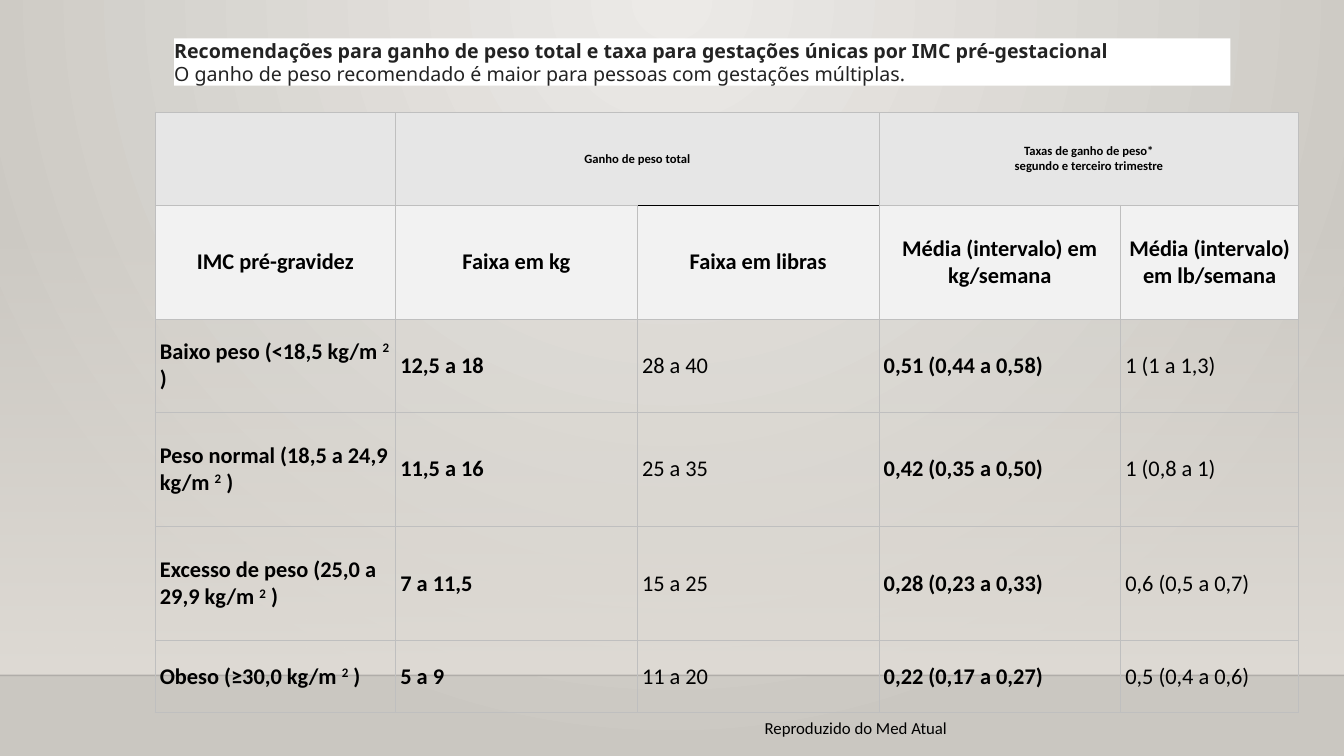
from lxml import etree
from pptx import Presentation
from pptx.dml.color import RGBColor
from pptx.enum.shapes import MSO_CONNECTOR, MSO_SHAPE
from pptx.enum.text import MSO_ANCHOR, PP_ALIGN
from pptx.oxml import parse_xml
from pptx.oxml.ns import qn
from pptx.util import Cm, Pt

RECT = MSO_SHAPE.RECTANGLE
STRAIGHT = MSO_CONNECTOR.STRAIGHT
MIDDLE = MSO_ANCHOR.MIDDLE
LEFT, CENTER = PP_ALIGN.LEFT, PP_ALIGN.CENTER
NS = 'xmlns:a="http://schemas.openxmlformats.org/drawingml/2006/main"'
PLAIN = "{2D5ABB26-0587-4C30-8999-92F81FD0307C}"  # table style without grid
GREY, BLACK = "BFBFBF", "000000"


def rgb(code):
    return RGBColor.from_string(code)


def write(par, text, size, bold=False, font="Calibri", color=BLACK):
    run = par.add_run()
    run.text = text
    run.font.size, run.font.bold, run.font.name = Pt(size), bold, font
    run.font.color.rgb = rgb(color)
    return run


prs = Presentation()
prs.slide_width, prs.slide_height = Cm(33.87), Cm(19.05)
slide = prs.slides.add_slide(prs.slide_layouts[6])
shapes = slide.shapes

# Backdrop: round glow, fading wall and floor line
wall = shapes.add_shape(RECT, 0, Cm(5.61), prs.slide_width, Cm(11.41))
wall.shadow.inherit = False
wall.line.fill.background()
glow = ('<a:path path="circle"><a:fillToRect l="43000" r="43000" b="100000"/>'
        '</a:path>')
fade = '<a:lin ang="5400000" scaled="0"/>'
for fill, first, alpha, last, shade in (
        (slide.background.fill, "ECEAE7", 100000, "CAC7C1", glow),
        (wall.fill, "DFDBD5", 0, "DFDBD5", fade)):
    fill.gradient()
    owner = fill._xPr
    old = owner.find(qn("a:gradFill"))
    owner.replace(old, parse_xml(
        f'<a:gradFill {NS} rotWithShape="1"><a:gsLst>'
        f'<a:gs pos="0"><a:srgbClr val="{first}"><a:alpha val="{alpha}"/>'
        f'</a:srgbClr></a:gs><a:gs pos="100000"><a:srgbClr val="{last}"/>'
        f'</a:gs></a:gsLst>{shade}</a:gradFill>'))

floor = shapes.add_connector(STRAIGHT, 0, Cm(17.02), prs.slide_width, Cm(17.02))
floor.line.width = Pt(1)
floor.line.color.rgb = rgb("000001")
tint = next(floor._element.iter(qn("a:srgbClr")))
etree.SubElement(tint, qn("a:alpha")).set("val", "20000")
etree.SubElement(floor._element.spPr, qn("a:effectLst"))

# Table of weight gain
heads = [
    ["", "Ganho de peso total", "",
     "Taxas de ganho de peso*\vsegundo e terceiro trimestre", ""],
    ["IMC pré-gravidez", "Faixa em kg", "Faixa em libras",
     "Média (intervalo) em kg/semana", "Média (intervalo) em lb/semana"],
]
body = [
    ["Baixo peso (<18,5 kg/m ", "12,5 a 18", "28 a 40",
     "0,51 (0,44 a 0,58)", "1 (1 a 1,3)"],
    ["Peso normal (18,5 a 24,9 kg/m ", "11,5 a 16", "25 a 35",
     "0,42 (0,35 a 0,50)", "1 (0,8 a 1)"],
    ["Excesso de peso (25,0 a 29,9 kg/m ", "7 a 11,5", "15 a 25",
     "0,28 (0,23 a 0,33)", "0,6 (0,5 a 0,7)"],
    ["Obeso (≥30,0 kg/m ", "5 a 9", "11 a 20",
     "0,22 (0,17 a 0,27)", "0,5 (0,4 a 0,6)"],
]
widths = [6.06, 6.09, 6.09, 6.09, 4.49]
heights = [2.33, 2.87, 2.34, 2.88, 2.88, 1.81]
fills = ["E6E6E6", "F2F2F2"]

frame = shapes.add_table(len(heights), len(widths), Cm(3.91), Cm(2.84),
                         Cm(sum(widths)), Cm(sum(heights)))
table = frame.table
table.first_row = table.horz_banding = False
frame._element.find(".//" + qn("a:tableStyleId")).text = PLAIN
for col, width in zip(table.columns, widths):
    col.width = Cm(width)
for row, height in zip(table.rows, heights):
    row.height = Cm(height)
for start in (1, 3):
    table.cell(0, start).merge(table.cell(0, start + 1))

for r, texts in enumerate(heads + body):
    head = r < len(heads)
    for c, text in enumerate(texts):
        cell = table.cell(r, c)
        cell.vertical_anchor = MIDDLE
        cell.margin_left = cell.margin_right = Cm(0.12)
        cell.margin_top = cell.margin_bottom = Cm(0.06)
        for side in "LRTB":
            dark = (r, c, side) in ((0, 2, "B"), (1, 2, "T"))
            cell._tc.get_or_add_tcPr().append(parse_xml(
                f'<a:ln{side} {NS} w="7620"><a:solidFill><a:srgbClr '
                f'val="{BLACK if dark else GREY}"/></a:solidFill></a:ln{side}>'))
        if head:
            cell.fill.solid()
            cell.fill.fore_color.rgb = rgb(fills[r])
        else:
            cell.fill.background()
        par = cell.text_frame.paragraphs[0]
        par.alignment = CENTER if head else LEFT
        size = 9 if r == 0 else 16
        bold = head or c in (0, 1, 3)
        for n, line in enumerate(text.split("\v") if text else []):
            if n:
                par.add_line_break()
            write(par, line, size, bold)
        if c == 0 and not head:
            power = write(par, "2", size, True)
            power._r.get_or_add_rPr().set("baseline", "30000")
            write(par, " )", size, True)

# Title and source
title = shapes.add_shape(RECT, Cm(4.39), Cm(0.97), Cm(26.62), Cm(1.19))
title.shadow.inherit = False
title.fill.solid()
title.fill.fore_color.rgb = rgb("FFFFFF")
title.line.fill.background()
box = title.text_frame
box.word_wrap = True
box.vertical_anchor = MIDDLE
box.margin_left = box.margin_right = box.margin_top = box.margin_bottom = 0
lines = [
    ("Recomendações para ganho de peso total e taxa para gestações únicas "
     "por IMC pré-gestacional", True),
    ("O ganho de peso recomendado é maior para pessoas com gestações múltiplas.",
     False),
]
for n, (text, bold) in enumerate(lines):
    par = box.add_paragraph() if n else box.paragraphs[0]
    par.alignment = LEFT
    write(par, text, 14, bold, "Noto Sans", "232323")

credit = shapes.add_textbox(Cm(19.02), Cm(17.96), Cm(16.94), Cm(0.77))
credit.text_frame.word_wrap = True
write(credit.text_frame.paragraphs[0], "Reproduzido do Med Atual", 12)

prs.save("out.pptx")
